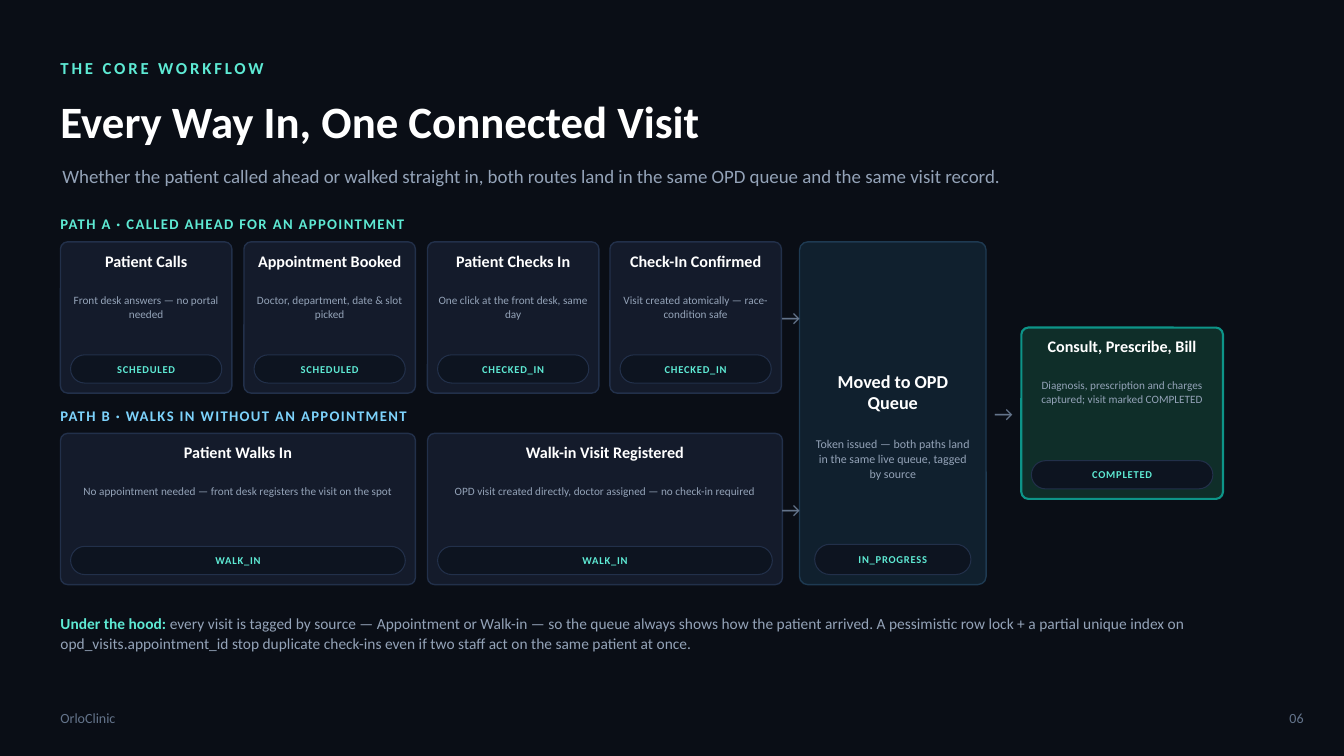
from collections import namedtuple

from pptx import Presentation
from pptx.dml.color import RGBColor
from pptx.enum.shapes import MSO_SHAPE as Shape
from pptx.enum.text import MSO_ANCHOR as Anchor, MSO_AUTO_SIZE as AutoSize, PP_ALIGN as Align
from pptx.util import Pt

PX = 9144  # 100 px to the inch
Style = namedtuple("Style", "size color bold spacing", defaults=(False, 0))


class Theme:
    font = "Calibri"
    background = "0A0E16"
    card, card_line = "141B2B", "22304A"
    queue, queue_line = "10202E", "1E3A52"
    final, final_line = "0F2E29", "0D9488"
    pill = "0D1420"
    eyebrow = Style(12, "5EEAD4", True, 2)
    title = Style(32, "FFFFFF", True)
    subtitle = Style(13.5, "94A3B8")
    path_a = Style(10.5, "5EEAD4", True, 1)
    path_b = Style(10.5, "7DD3FC", True, 1)
    card_title = Style(11.5, "FFFFFF", True)
    card_note = Style(8, "94A3B8")
    queue_title = Style(13, "FFFFFF", True)
    queue_note = Style(8.5, "94A3B8")
    status = Style(7.5, "5EEAD4", True, 0.5)
    arrow = Style(15, "64748B")
    remark_lead = Style(11, "5EEAD4", True)
    remark = Style(11, "94A3B8")
    footer = Style(10, "64748B")


prs = Presentation()
prs.slide_width, prs.slide_height = 1333 * PX, 750 * PX
slide = prs.slides.add_slide(prs.slide_layouts[5])
slide.background.fill.solid()
slide.background.fill.fore_color.rgb = RGBColor.from_string(Theme.background)


def write(area, *parts, align=Align.LEFT, anchor=Anchor.MIDDLE, leading=None, holder=None):
    """Set one paragraph of (text, style) parts in holder, or in a new text box."""
    left, top, width, height = (n * PX for n in area)
    holder = holder or slide.shapes.add_textbox(left, top, width, height)
    holder.left, holder.top, holder.width, holder.height = left, top, width, height
    frame = holder.text_frame
    frame.word_wrap, frame.auto_size = True, AutoSize.NONE
    frame.vertical_anchor = anchor
    frame.margin_left = frame.margin_top = frame.margin_right = frame.margin_bottom = 0
    paragraph = frame.paragraphs[0]
    paragraph.alignment = align
    if leading:
        paragraph.line_spacing = Pt(leading)
    for text, style in parts:
        run = paragraph.add_run()
        run.text = text
        run.font.name, run.font.size, run.font.bold = Theme.font, Pt(style.size), style.bold
        run.font.color.rgb = RGBColor.from_string(style.color)
        if style.spacing:
            run.font._element.set("spc", str(int(style.spacing * 100)))


def rounded(area, radius, fill, line, weight):
    box = slide.shapes.add_shape(Shape.ROUNDED_RECTANGLE, *(n * PX for n in area))
    box.adjustments[0] = radius / min(area[2:])
    box.shadow.inherit = False
    box.fill.solid()
    box.fill.fore_color.rgb = RGBColor.from_string(fill)
    box.line.color.rgb = RGBColor.from_string(line)
    box.line.width = Pt(weight)
    return box


# Heading
write((60, 50, 800, 35), ("THE CORE WORKFLOW", Theme.eyebrow))
write((60, 85, 1180, 70), ("Every Way In, One Connected Visit", Theme.title), holder=slide.shapes.title)
write((62, 150, 1210, 50), ("Whether the patient called ahead or walked straight in, both routes land "
                            "in the same OPD queue and the same visit record.", Theme.subtitle))

# Two paths: each fills the same width with equal cards
PATHS_LEFT, PATHS_WIDTH, GAP = 60, 715, 12
paths = [
    (208, "PATH A · CALLED AHEAD FOR AN APPOINTMENT", Theme.path_a, [
        ("Patient Calls", "Front desk answers — no portal needed", "SCHEDULED"),
        ("Appointment Booked", "Doctor, department, date & slot picked", "SCHEDULED"),
        ("Patient Checks In", "One click at the front desk, same day", "CHECKED_IN"),
        ("Check-In Confirmed", "Visit created atomically — race-condition safe", "CHECKED_IN")]),
    (398, "PATH B · WALKS IN WITHOUT AN APPOINTMENT", Theme.path_b, [
        ("Patient Walks In", "No appointment needed — front desk registers the visit on the spot", "WALK_IN"),
        ("Walk-in Visit Registered", "OPD visit created directly, doctor assigned — no check-in required",
         "WALK_IN")]),
]
cards = []
for top, heading, style, steps in paths:
    write((PATHS_LEFT, top, PATHS_WIDTH, 28), (heading, style))
    pitch = (PATHS_WIDTH + GAP) / len(steps)
    for i, step in enumerate(steps):
        area = (round(PATHS_LEFT + i * pitch), top + 32, round(pitch - GAP), 150)
        cards.append((area, *step, (Theme.card, Theme.card_line, 1)))
cards.append(((1013, 325, 200, 170), "Consult, Prescribe, Bill",
              "Diagnosis, prescription and charges captured; visit marked COMPLETED", "COMPLETED",
              (Theme.final, Theme.final_line, 1.5)))

pills = []
for (left, top, width, height), title, note, status, look in cards:
    rounded((left, top, width, height), 7, *look)
    inner_left, inner_width = left + 10, width - 20
    write((inner_left, top + 10, inner_width, 38), (title, Theme.card_title),
          align=Align.CENTER, anchor=Anchor.TOP, leading=13)
    write((inner_left, top + 50, inner_width, height - 94), (note, Theme.card_note),
          align=Align.CENTER, anchor=Anchor.TOP, leading=10)
    pills.append(((inner_left, top + height - 38, inner_width, 28), status))

# Shared queue
rounded((793, 240, 185, 340), 8, Theme.queue, Theme.queue_line, 1)
write((808, 355, 155, 55), ("Moved to OPD Queue", Theme.queue_title),
      align=Align.CENTER, anchor=Anchor.BOTTOM, leading=15)
write((808, 410, 155, 90), ("Token issued — both paths land in the same live queue, tagged by source",
                            Theme.queue_note), align=Align.CENTER, leading=10.5)
pills.append(((808, 540, 155, 30), "IN_PROGRESS"))

for area, status in pills:
    pill = rounded(area, area[3] / 2, Theme.pill, Theme.card_line, 0.75)
    write(area, (status, Theme.status), align=Align.CENTER, holder=pill)

for left, top, width in [(775, 293, 18), (775, 483, 18), (978, 388, 35)]:
    write((left, top, width, 44), ("→", Theme.arrow), align=Align.CENTER)

# Remark and footer
write((60, 585, 1210, 85), ("Under the hood: ", Theme.remark_lead),
      ("every visit is tagged by source — Appointment or Walk-in — so the queue always shows how the "
       "patient arrived. A pessimistic row lock + a partial unique index on opd_visits.appointment_id "
       "stop duplicate check-ins even if two staff act on the same patient at once.", Theme.remark),
      leading=14.5)
write((1233, 695, 60, 35), ("06", Theme.footer), align=Align.RIGHT)
write((60, 695, 300, 35), ("OrloClinic", Theme.footer))

prs.save("out.pptx")
